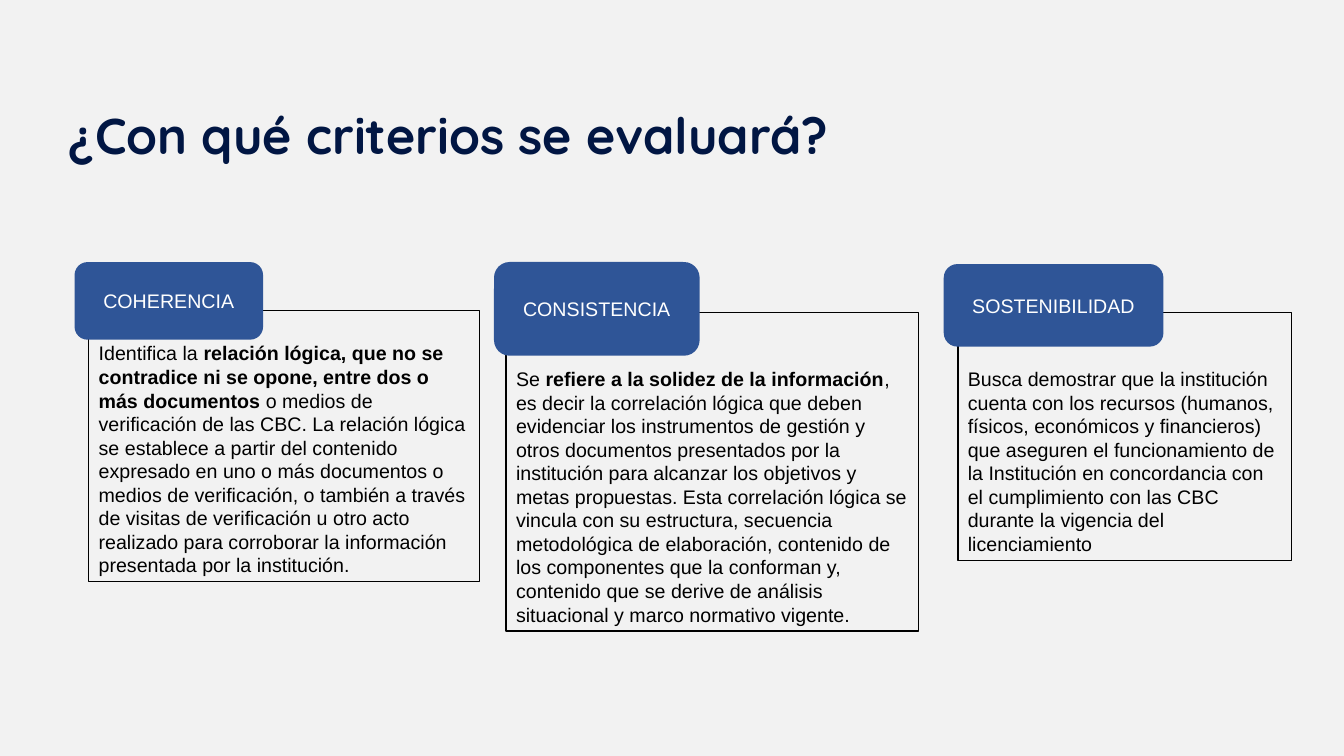
from pptx import Presentation
from pptx.dml.color import RGBColor
from pptx.enum.shapes import MSO_SHAPE
from pptx.enum.text import MSO_ANCHOR, PP_ALIGN
from pptx.util import Inches, Pt

WIDTH, HEIGHT = Inches(13.33), Inches(7.5)
COLORS = {
    "background": "F2F2F2",
    "title": "011643",
    "tag": "2F5597",
    "tag_text": "FFFFFF",
    "ink": "000000",
}

CRITERIA = [
    {
        "name": "COHERENCIA",
        "box": (6.6, 41.07, 29.1, 35.87),
        "tag": (-1.05, -6.4, 14.03, 10.27),
        "runs": [
            ("Identifica la ", False),
            ("relación lógica, que no se contradice ni se opone, "
             "entre dos o más documentos ", True),
            ("o medios de verificación de las CBC. La relación lógica se "
             "establece a partir del contenido expresado en uno o más "
             "documentos o medios de verificación, o también a través de "
             "visitas de verificación u otro acto realizado para corroborar "
             "la información presentada por la institución.", False),
        ],
    },
    {
        "name": "CONSISTENCIA",
        "box": (37.66, 41.33, 30.68, 42.13),
        "tag": (-0.9, -6.67, 15.3, 12.4),
        "runs": [
            ("Se ", False),
            ("refiere a la solidez de la información", True),
            (", es decir la correlación lógica que deben evidenciar los "
             "instrumentos de gestión y otros documentos presentados por la "
             "institución para alcanzar los objetivos y metas propuestas. "
             "Esta correlación lógica se vincula con su estructura, secuencia "
             "metodológica de elaboración, contenido de los componentes que "
             "la conforman y, contenido que se derive de análisis situacional "
             "y marco normativo vigente.", False),
        ],
    },
    {
        "name": "SOSTENIBILIDAD",
        "box": (71.27, 41.33, 24.83, 32.8),
        "tag": (-1.05, -6.4, 16.35, 10.93),
        "runs": [
            ("Busca demostrar que la institución cuenta con los recursos "
             "(humanos, físicos, económicos y financieros) que aseguren el "
             "funcionamiento de la Institución en concordancia con el "
             "cumplimiento con las CBC durante la vigencia del "
             "licenciamiento", False),
        ],
    },
]


def color(name):
    return RGBColor.from_string(COLORS[name])


def place(left, top, width, height):
    return (int(WIDTH * left / 100), int(HEIGHT * top / 100),
            int(WIDTH * width / 100), int(HEIGHT * height / 100))


def write(shape, runs, ink, align, anchor, font="Arial", size=14):
    frame = shape.text_frame
    frame.word_wrap = True
    frame.vertical_anchor = anchor
    frame.margin_left = frame.margin_right = Inches(0.1)
    frame.margin_top = frame.margin_bottom = Inches(0.05)
    paragraph = frame.paragraphs[0]
    paragraph.alignment = align
    for text, bold in runs:
        run = paragraph.add_run()
        run.text = text
        run.font.name = font
        run.font.size = Pt(size)
        run.font.bold = bold
        run.font.color.rgb = color(ink)


def add_title(slide, box):
    title = slide.shapes.title
    title.left, title.top, title.width, title.height = place(*box)
    write(title, [("¿Con qué criterios se evaluará?", True)], "title",
          PP_ALIGN.LEFT, MSO_ANCHOR.MIDDLE, "Quicksand", 36)


def add_criterion(slide, box, name, tag, runs):
    description = slide.shapes.add_shape(MSO_SHAPE.RECTANGLE, *place(*box))
    description.shadow.inherit = False
    description.fill.background()
    description.line.color.rgb = color("ink")
    description.line.width = Pt(1)
    write(description, runs, "ink", PP_ALIGN.LEFT, MSO_ANCHOR.BOTTOM)

    shift_x, shift_y, width, height = tag
    label = slide.shapes.add_shape(
        MSO_SHAPE.ROUNDED_RECTANGLE,
        *place(box[0] + shift_x, box[1] + shift_y, width, height))
    label.shadow.inherit = False
    label.fill.solid()
    label.fill.fore_color.rgb = color("tag")
    label.line.fill.background()
    write(label, [(name, False)], "tag_text", PP_ALIGN.CENTER, MSO_ANCHOR.MIDDLE)


def main():
    deck = Presentation()
    deck.slide_width, deck.slide_height = WIDTH, HEIGHT
    slide = deck.slides.add_slide(deck.slide_layouts.get_by_name("Title Only"))
    slide.background.fill.solid()
    slide.background.fill.fore_color.rgb = color("background")
    add_title(slide, (4.35, 12.93, 94.75, 9.6))
    for criterion in CRITERIA:
        add_criterion(slide, **criterion)
    deck.save("out.pptx")


if __name__ == "__main__":
    main()
